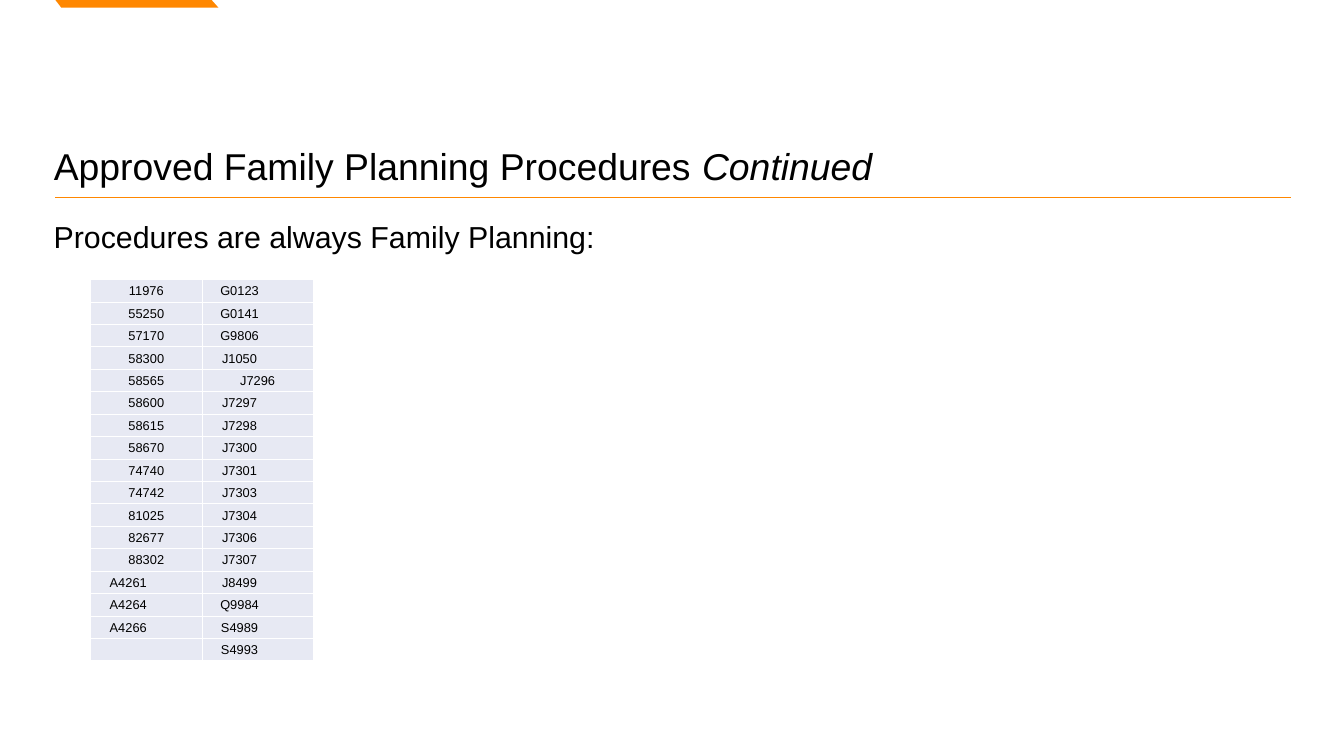
import pptx
import pptx.dml.color
import pptx.enum.shapes
import pptx.enum.text
import pptx.oxml.ns
import pptx.util
from lxml import etree

COLUMNS, ROWS = 16, 9
ANCHOR = pptx.enum.text.MSO_ANCHOR
ALIGN = pptx.enum.text.PP_ALIGN

NUMERIC_CODES = ("11976 55250 57170 58300 58565 58600 58615 58670 74740 "
                 "74742 81025 82677 88302 A4261 A4264 A4266").split() + [""]
LETTER_CODES = ("G0123 G0141 G9806 J1050 J7296 J7297 J7298 J7300 J7301 "
                "J7303 J7304 J7306 J7307 J8499 Q9984 S4989 S4993").split()
CENTERED_LETTER_CODE = "J7296"


def color(value):
    return pptx.dml.color.RGBColor.from_string(value)


class ProcedureSlide:
    """Places styled elements on a grid of 16 columns and 9 rows."""

    font = "Arial"
    ink = "000000"
    accent = "FF8700"
    cell_fill = "E7E9F3"
    border = "FFFFFF"

    def __init__(self, presentation):
        self.column = presentation.slide_width / COLUMNS
        self.row = presentation.slide_height / ROWS
        self.slide = presentation.slides.add_slide(presentation.slide_layouts[5])

    def x(self, columns):
        return pptx.util.Emu(round(columns * self.column))

    def y(self, rows):
        return pptx.util.Emu(round(rows * self.row))

    def box(self, left, top, width, height):
        return self.x(left), self.y(top), self.x(width), self.y(height)

    def add_run(self, paragraph, text, size, italic=False):
        run = paragraph.add_run()
        run.text = text
        run.font.name = self.font
        run.font.size = pptx.util.Pt(size)
        run.font.bold = False
        run.font.italic = italic
        run.font.color.rgb = color(self.ink)

    def set_frame(self, frame, top_inset):
        frame.word_wrap = True
        frame.vertical_anchor = ANCHOR.TOP
        frame.margin_left = frame.margin_right = self.x(0.1)
        frame.margin_top = self.y(top_inset)
        frame.margin_bottom = self.y(0.05)
        frame.paragraphs[0].alignment = ALIGN.LEFT

    def add_title(self, area, text, italic_text):
        title = self.slide.shapes.title
        title.left, title.top, title.width, title.height = self.box(*area)
        frame = title.text_frame
        self.set_frame(frame, 0.09)
        frame.auto_size = pptx.enum.text.MSO_AUTO_SIZE.NONE
        self.add_run(frame.paragraphs[0], text, 32)
        self.add_run(frame.paragraphs[0], italic_text, 32, italic=True)

    def add_text(self, area, text):
        frame = self.slide.shapes.add_textbox(*self.box(*area)).text_frame
        self.set_frame(frame, 0.08)
        frame.auto_size = pptx.enum.text.MSO_AUTO_SIZE.SHAPE_TO_FIT_TEXT
        self.add_run(frame.paragraphs[0], text, 26)

    def add_rule(self, left, right, top):
        rule = self.slide.shapes.add_connector(
            pptx.enum.shapes.MSO_CONNECTOR.STRAIGHT,
            self.x(left), self.y(top), self.x(right), self.y(top))
        rule.line.color.rgb = color(self.accent)
        rule.line.width = pptx.util.Pt(1)
        properties = rule._element.spPr
        etree.SubElement(properties, pptx.oxml.ns.qn("a:effectLst"))

    def add_outline(self, points):
        corners = [(self.x(left), self.y(top)) for left, top in points]
        builder = self.slide.shapes.build_freeform(*corners[0])
        builder.add_line_segments(corners[1:], close=True)
        shape = builder.convert_to_shape()
        shape.shadow.inherit = False
        shape.fill.solid()
        shape.fill.fore_color.rgb = color(self.accent)
        shape.line.fill.background()

    def add_borders(self, cell):
        properties = cell._tc.get_or_add_tcPr()
        for side in ("lnL", "lnR", "lnT", "lnB"):
            line = etree.SubElement(properties, pptx.oxml.ns.qn(f"a:{side}"),
                                    w=str(pptx.util.Pt(1)))
            fill = etree.SubElement(line, pptx.oxml.ns.qn("a:solidFill"))
            etree.SubElement(fill, pptx.oxml.ns.qn("a:srgbClr"), val=self.border)

    def format_cell(self, cell, text, right_inset):
        self.add_borders(cell)
        cell.fill.solid()
        cell.fill.fore_color.rgb = color(self.cell_fill)
        cell.vertical_anchor = ANCHOR.MIDDLE
        cell.margin_left = self.x(0.01)
        cell.margin_right = self.x(right_inset)
        cell.margin_top = self.y(0.01)
        cell.margin_bottom = 0
        paragraph = cell.text_frame.paragraphs[0]
        paragraph.alignment = ALIGN.CENTER
        if text:
            self.add_run(paragraph, text, 11)
        else:
            # Keep the empty cell from stretching its row
            paragraph._p.get_or_add_endParaRPr().set("sz", "1100")

    def add_code_table(self, area, rows):
        table = self.slide.shapes.add_table(
            len(rows), len(rows[0]), *self.box(*area)).table
        table.first_row = table.horz_banding = False
        for table_row, codes in zip(table.rows, rows):
            table_row.height = self.y(area[3] / len(rows))
            for cell, code in zip(table_row.cells, codes):
                centered = code.isdigit() or code == CENTERED_LETTER_CODE
                self.format_cell(cell, code, 0.01 if centered else 0.44)


def main():
    presentation = pptx.Presentation()
    presentation.slide_width = pptx.util.Inches(16)
    presentation.slide_height = pptx.util.Inches(9)
    page = ProcedureSlide(presentation)

    # Accent tab and rule
    page.add_rule(0.66, 15.37, 2.35)
    page.add_outline([(0.66, 0), (0.73, 0.09), (2.6, 0.09), (2.52, 0)])

    # Headings
    page.add_title((0.54, 1.61, 14.85, 0.36),
                   "Approved Family Planning Procedures ", "Continued")
    page.add_text((0.54, 2.52, 12.35, 0.54),
                  "Procedures are always Family Planning:")

    # Procedure codes
    page.add_code_table((1.08, 3.33, 2.65, 4.54),
                        list(zip(NUMERIC_CODES, LETTER_CODES)))

    presentation.save("out.pptx")


if __name__ == "__main__":
    main()
